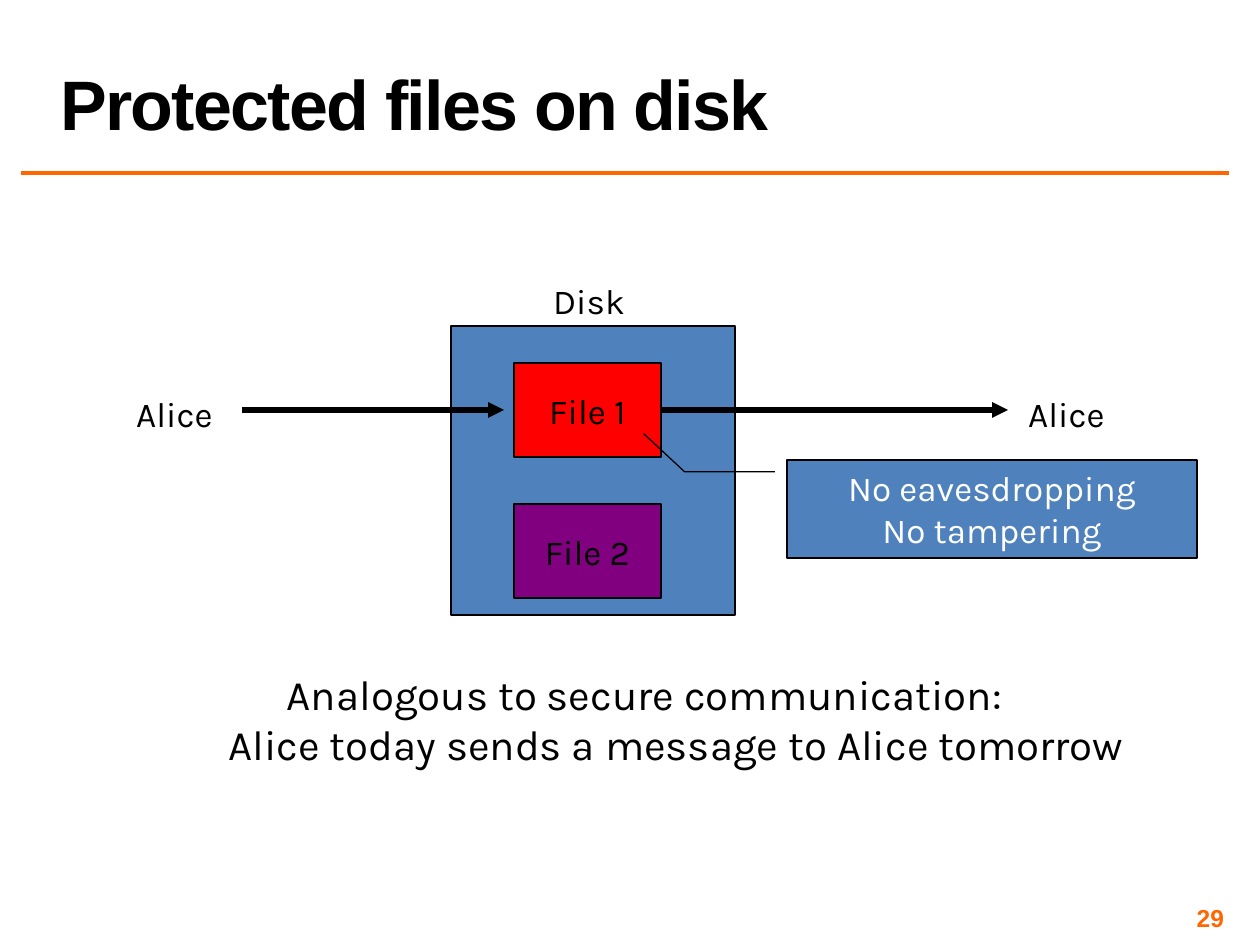
from dataclasses import dataclass
from typing import NamedTuple, Optional

from lxml.etree import SubElement
from pptx import Presentation
from pptx.dml.color import RGBColor as Rgb
from pptx.enum.shapes import MSO_CONNECTOR as Connector, MSO_SHAPE as Shape
from pptx.enum.text import MSO_ANCHOR as Anchor, MSO_AUTO_SIZE as AutoSize, PP_ALIGN as Align
from pptx.oxml.ns import qn
from pptx.util import Emu, Pt

PX_PER_INCH = 126
EMU_PER_PX = 914400 / PX_PER_INCH


@dataclass(frozen=True)
class Theme:
    ink: str = "000000"
    white: str = "FFFFFF"
    accent: str = "FF6600"
    panel: str = "4F81BD"
    file_1: str = "FF0000"
    file_2: str = "800080"
    heading_font: str = "Arial"
    body_font: str = "Karla"
    title_size: int = 40
    summary_size: int = 24
    label_size: int = 20
    number_size: int = 14
    outline: float = 0.75
    rule: float = 2
    arrow: float = 3


THEME = Theme()


class Box(NamedTuple):
    left: int
    top: int
    width: int
    height: int


@dataclass(frozen=True)
class Label:
    text: str
    box: Box
    size: int = THEME.label_size


@dataclass(frozen=True)
class Block:
    box: Box
    fill: str
    text: str = ""


def px(length: float) -> Emu:
    return Emu(round(length * EMU_PER_PX))


def place(box: Box) -> list[Emu]:
    return [px(length) for length in box]


def write(frame, text: str, *, size: int = THEME.label_size, color: str = THEME.ink,
          font: str = THEME.body_font, bold: bool = False, align=Align.CENTER,
          anchor=Anchor.TOP, wrap: bool = True, grow: bool = False,
          line_spacing: Optional[float] = None, tracking: int = 0,
          inset: Optional[int] = None) -> None:
    """Fill a text frame, one paragraph per line of text."""
    frame.word_wrap = wrap
    frame.auto_size = AutoSize.SHAPE_TO_FIT_TEXT if grow else AutoSize.NONE
    frame.vertical_anchor = anchor
    if inset is not None:
        frame.margin_left = frame.margin_right = px(inset)
        frame.margin_top = frame.margin_bottom = px(inset)
    for index, line in enumerate(text.split("\n")):
        paragraph = frame.add_paragraph() if index else frame.paragraphs[0]
        paragraph.alignment = align
        paragraph.line_spacing = line_spacing
        run = paragraph.add_run()
        run.text = line
        run.font.name, run.font.size, run.font.bold = font, Pt(size), bold
        run.font.color.rgb = Rgb.from_string(color)
        if tracking:
            run.font._element.set("spc", str(tracking * 100))


def add_label(slide, label: Label) -> None:
    text_box = slide.shapes.add_textbox(*place(label.box))
    write(text_box.text_frame, label.text, size=label.size, grow=True)


def add_block(slide, block: Block, kind=Shape.RECTANGLE, **text_format):
    shape = slide.shapes.add_shape(kind, *place(block.box))
    shape.shadow.inherit = False
    shape.fill.solid()
    shape.fill.fore_color.rgb = Rgb.from_string(block.fill)
    shape.line.color.rgb = Rgb.from_string(THEME.ink)
    shape.line.width = Pt(THEME.outline)
    if block.text:
        write(shape.text_frame, block.text, **text_format)
    return shape


def add_line(slide, start: int, end: int, y: int, color: str, width: float,
             arrow: bool = False):
    line = slide.shapes.add_connector(Connector.STRAIGHT, px(start), px(y), px(end), px(y))
    line.line.color.rgb = Rgb.from_string(color)
    line.line.width = Pt(width)
    if arrow:
        SubElement(line.line._get_or_add_ln(), qn("a:tailEnd"), type="triangle")
    SubElement(line._element.spPr, qn("a:effectLst"))
    return line


# Diagram layout
FILE_LEFT, FILE_WIDTH, FILE_HEIGHT = 514, 147, 94
FILE_TOP, FILE_PITCH = 363, 141
FLOW_Y = FILE_TOP + FILE_HEIGHT // 2

DISK = Block(Box(451, 326, 284, 289), THEME.panel)
FILES = [
    Block(Box(FILE_LEFT, FILE_TOP + row * FILE_PITCH, FILE_WIDTH, FILE_HEIGHT),
          fill, f"File {row + 1}")
    for row, fill in enumerate((THEME.file_1, THEME.file_2))
]
GUARANTEES = Block(Box(787, 460, 410, 98), THEME.panel, "No eavesdropping\nNo tampering")
GUARANTEES_POINTER = (0.12, -0.03, 0.12, -0.25, -0.27, -0.35)
LABELS = [
    Label("Disk", Box(535, 273, 108, 55)),
    Label("Alice", Box(116, 386, 117, 55)),
    Label("Alice", Box(1008, 386, 117, 55)),
    Label("Analogous to secure communication:\n\tAlice today sends a message to Alice tomorrow",
          Box(60, 662, 1169, 115), THEME.summary_size),
]


def main() -> None:
    deck = Presentation()
    deck.slide_width, deck.slide_height = px(10 * PX_PER_INCH), px(7.5 * PX_PER_INCH)
    slide = deck.slides.add_slide(deck.slide_layouts[5])

    # Title and rule
    add_line(slide, 21, 1229, 173, THEME.accent, THEME.rule)
    title = slide.shapes.title
    title.left, title.top, title.width, title.height = place(Box(48, 3, 1181, 147))
    write(title.text_frame, "Protected files on disk", size=THEME.title_size,
          font=THEME.heading_font, bold=True, align=Align.LEFT, anchor=Anchor.BOTTOM,
          line_spacing=0.8, tracking=-1)

    # Disk with its files
    add_block(slide, DISK)
    file_1, _ = [add_block(slide, file, anchor=Anchor.MIDDLE, wrap=False) for file in FILES]

    # Alice writes, then reads
    add_line(slide, 242, 504, FLOW_Y, THEME.ink, THEME.arrow, arrow=True)
    reading = add_line(slide, FILE_LEFT + FILE_WIDTH, 1008, FLOW_Y, THEME.ink,
                       THEME.arrow, arrow=True)
    reading.begin_connect(file_1, 3)

    # Guarantees for the file
    callout = add_block(slide, GUARANTEES, Shape.LINE_CALLOUT_2, color=THEME.white)
    for index, value in enumerate(GUARANTEES_POINTER):
        callout.adjustments[index] = value

    # Labels and summary
    for label in LABELS:
        add_label(slide, label)

    # Page number
    page_number = slide.shapes.add_textbox(*place(Box(935, 903, 294, 29)))
    write(page_number.text_frame, "29", size=THEME.number_size, color=THEME.accent,
          font=THEME.heading_font, bold=True, align=Align.RIGHT, anchor=Anchor.MIDDLE, inset=5)

    deck.save("out.pptx")


if __name__ == "__main__":
    main()
